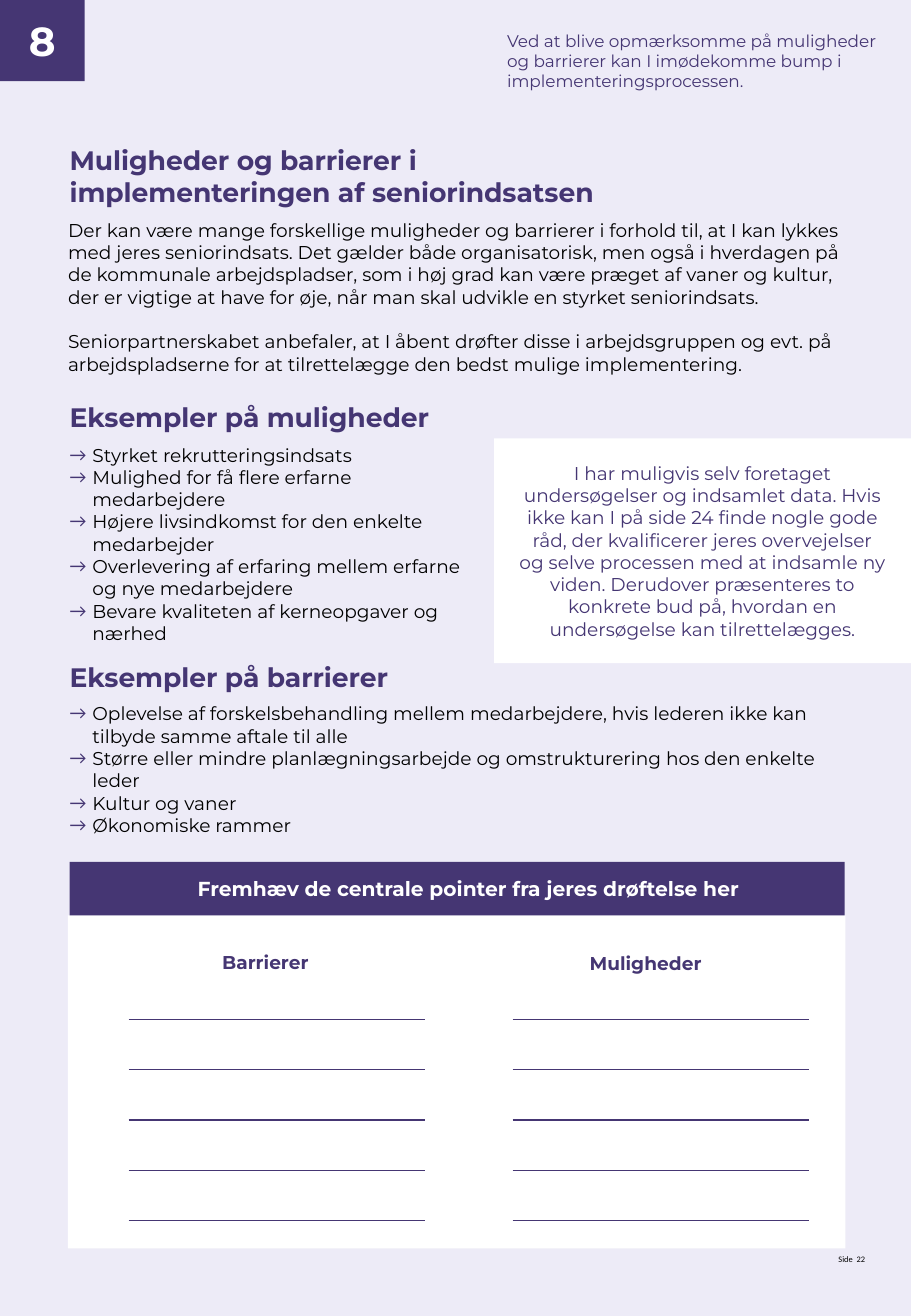
"""Builds the slide on openings and barriers in the senior effort."""
from lxml import etree
from pptx import Presentation, util as u
from pptx.dml.color import RGBColor
from pptx.enum import shapes, text
from pptx.oxml.ns import qn

PLUM = RGBColor(0x45, 0x36, 0x73)
MIST = RGBColor(0xED, 0xEB, 0xF7)
WHITE = RGBColor(0xFF, 0xFF, 0xFF)
BLACK = RGBColor(0, 0, 0)
MID, RIGHT = text.PP_ALIGN.CENTER, text.PP_ALIGN.RIGHT

PAGE = (540, 779.8)
INDENT = 13.5
PAD = 14.4

HEAD = dict(size=15.75, bold=True, color=PLUM)
BODY = dict(size=11, color=BLACK)
LABEL = dict(size=11, bold=True, color=PLUM)

TITLE = "Muligheder og barrierer i implementeringen af seniorindsatsen"
LEAD = [
    "Der kan være mange forskellige muligheder og barrierer i forhold til, at I kan lykkes med jeres "
    "seniorindsats. Det gælder både organisatorisk, men også i hverdagen på de kommunale arbejdspladser, "
    "som i høj grad kan være præget af vaner og kultur, der er vigtige at have for øje, når man skal "
    "udvikle en styrket seniorindsats.",
    "Seniorpartnerskabet anbefaler, at I åbent drøfter disse i arbejdsgruppen og evt. på "
    "arbejdspladserne for at tilrettelægge den bedst mulige implementering.",
]
GAINS = [
    "Styrket rekrutteringsindsats",
    "Mulighed for få flere erfarne medarbejdere",
    "Højere livsindkomst for den enkelte medarbejder",
    "Overlevering af erfaring mellem erfarne og nye medarbejdere",
    "Bevare kvaliteten af kerneopgaver og nærhed",
]
BLOCKS = [
    "Oplevelse af forskelsbehandling mellem medarbejdere, hvis lederen ikke kan tilbyde samme aftale til alle",
    "Større eller mindre planlægningsarbejde og omstrukturering hos den enkelte leder",
    "Kultur og vaner",
    "Økonomiske rammer",
]
NOTE = (
    "I har muligvis selv foretaget undersøgelser og indsamlet data. Hvis ikke kan I på side 24 finde "
    "nogle gode råd, der kvalificerer jeres overvejelser og selve processen med at indsamle ny viden. "
    "Derudover præsenteres to konkrete bud på, hvordan en undersøgelse kan tilrettelægges."
)
INTRO = ("Ved at blive opmærksomme på muligheder og barrierer kan I imødekomme bump i "
         "implementeringsprocessen.")

ITEMS = [
    dict(box=(0, 0, *PAGE), fill=MIST),
    dict(box=(445.3, 743, 67.7, 16.6), lines=["Side  22"], align=RIGHT,
         font=dict(size=5, name="Calibri", color=BLACK)),
    dict(box=(41.3, 85.3, 338, 124.6), lines=[TITLE], font=HEAD),
    dict(box=(40.3, 129.6, 466.6, 133.2), lines=LEAD, font=BODY, after=13.2),
    dict(box=(41.3, 237.6, 240, 22.3), lines=["Eksempler på muligheder"], font=HEAD),
    dict(box=(41.3, 262.8, 247, 133.2), lines=GAINS, font=BODY, arrow=True),
    dict(box=(41.3, 391.7, 360.7, 22.3), lines=["Eksempler på barrierer"], font=HEAD),
    dict(box=(41.3, 416.2, 446.4, 93.6), lines=BLOCKS, font=BODY, arrow=True),
    dict(box=(293, 259.8, 247, 133.2), fill=WHITE, lines=[NOTE], align=MID, pad=PAD,
         font=dict(size=11, color=PLUM)),
    dict(box=(40.3, 542.5, 460.8, 197.3), fill=WHITE),
    dict(box=(41.3, 510.8, 459.4, 31.7), fill=PLUM, align=MID, pad=PAD, left=PAD + INDENT,
         lines=["Fremhæv de centrale pointer fra jeres drøftelse her"],
         font=dict(size=12, bold=True, color=WHITE)),
    dict(box=(76.3, 563.4, 162, 13.7), lines=["Barrierer"], align=MID, font=LABEL),
    dict(box=(301.7, 564, 162, 13.7), lines=["Muligheder"], align=MID, font=LABEL),
    dict(box=(286.2, 11.9, 253.4, 48.2), lines=[INTRO], pad=PAD, font=dict(size=10, color=PLUM)),
    dict(box=(0, 0, 50.2, 48.2), fill=PLUM, lines=["8"], align=MID, pad=PAD,
         font=dict(size=24, bold=True, color=WHITE)),
]
RULES = dict(lefts=(76.3, 303.8), top=604.1, gap=29.8, count=5, width=175.7)


def add_arrow(para):
    props = para._p.get_or_add_pPr()
    props.set("marL", str(u.Pt(INDENT)))
    props.set("indent", str(-u.Pt(INDENT)))
    tint = etree.SubElement(props, qn("a:buClr"))
    etree.SubElement(tint, qn("a:srgbClr"), val=str(PLUM))
    etree.SubElement(props, qn("a:buFont"), typeface="Calibri")
    etree.SubElement(props, qn("a:buChar"), char="→")


def set_font(font, look):
    values = dict(look, size=u.Pt(look["size"]))
    font.color.rgb = values.pop("color")
    for key, value in {"name": "Montserrat", **values}.items():
        setattr(font, key, value)


def write(frame, item):
    pad = item.get("pad", 0)
    form = dict(
        word_wrap=True,
        margin_left=u.Pt(item.get("left", pad)), margin_right=u.Pt(pad),
        margin_top=u.Pt(pad), margin_bottom=u.Pt(pad),
        vertical_anchor=text.MSO_ANCHOR.MIDDLE if pad else text.MSO_ANCHOR.TOP,
    )
    for key, value in form.items():
        setattr(frame, key, value)
    lines = item["lines"]
    for place, line in enumerate(lines):
        para = frame.paragraphs[0] if place == 0 else frame.add_paragraph()
        para.alignment = item.get("align", text.PP_ALIGN.LEFT)
        if place < len(lines) - 1:
            para.space_after = u.Pt(item.get("after", 0))
        if item.get("arrow"):
            add_arrow(para)
        run = para.add_run()
        run.text = line
        set_font(run.font, item["font"])


def add_item(slide, item):
    box = [u.Pt(side) for side in item["box"]]
    if "fill" in item:
        shape = slide.shapes.add_shape(shapes.MSO_SHAPE.RECTANGLE, *box)
        shape.shadow.inherit = False
        shape.fill.solid()
        shape.fill.fore_color.rgb = item["fill"]
        shape.line.fill.background()
    else:
        shape = slide.shapes.add_textbox(*box)
    if "lines" in item:
        write(shape.text_frame, item)


def add_rules(slide):
    for left in RULES["lefts"]:
        for row in range(RULES["count"]):
            top = u.Pt(RULES["top"] + row * RULES["gap"])
            rule = slide.shapes.add_connector(
                shapes.MSO_CONNECTOR.STRAIGHT, u.Pt(left), top, u.Pt(left + RULES["width"]), top)
            rule.line.color.rgb = PLUM
            rule.line.width = u.Pt(0.75)
            etree.SubElement(rule._element.spPr, qn("a:effectLst"))


def main():
    deck = Presentation()
    deck.slide_width, deck.slide_height = (u.Pt(side) for side in PAGE)
    slide = deck.slides.add_slide(deck.slide_layouts[6])
    for item in ITEMS:
        add_item(slide, item)
    add_rules(slide)
    deck.save("out.pptx")


if __name__ == "__main__":
    main()
